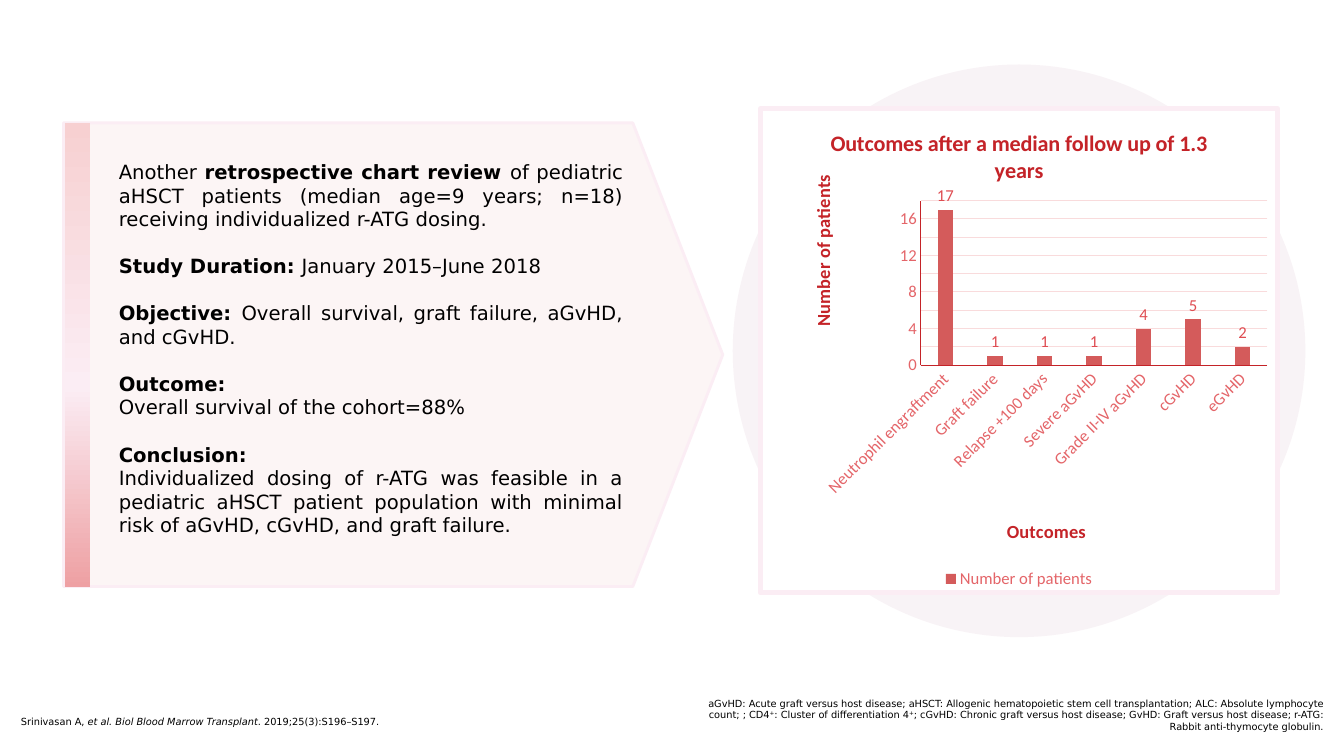
from lxml import etree
from pptx import Presentation
from pptx.chart.data import CategoryChartData
from pptx.dml.color import RGBColor
from pptx.enum import chart as ch, shapes, text
from pptx.oxml import parse_xml
from pptx.oxml.ns import nsdecls, qn
from pptx.util import Pt

BLACK = RGBColor(0, 0, 0)
WHITE = RGBColor(0xFF, 0xFF, 0xFF)
BLUSH = RGBColor(0xF2, 0xCD, 0xCD)
PALE_PINK = RGBColor(0xFB, 0xED, 0xF4)
ROSE = RGBColor(0xF7, 0xD0, 0xD1)
SALMON = RGBColor(0xEE, 0xA0, 0xA3)
PLUM = RGBColor(0x88, 0x1B, 0x5C)
CRIMSON = RGBColor(0xC4, 0x23, 0x28)
CORAL = RGBColor(0xE4, 0x65, 0x69)
LABEL_RED = RGBColor(0xDF, 0x4D, 0x52)
BAR_RED = RGBColor(0xD4, 0x5B, 0x5B)
GRID_PINK = RGBColor(0xF9, 0xDB, 0xDC)

BODY_FONT, CHART_FONT = "DejaVu Sans", "Calibri"
LINE_GAP = 16.8

# Each paragraph: space before, then (text, style) runs
STUDY = [
    (0, [("Another ", ""), ("retrospective chart review ", "bold"),
         ("of pediatric aHSCT patients (median age=9 years; n=18) "
          "receiving individualized r-ATG dosing.", "")]),
    (LINE_GAP, [("Study Duration: ", "bold"), ("January 2015–June 2018", "")]),
    (LINE_GAP, [("Objective: ", "bold"),
                ("Overall survival, graft failure, aGvHD, and cGvHD.", "")]),
    (LINE_GAP, [("Outcome:", "bold")]),
    (0, [("Overall survival of the cohort=88%", "")]),
    (LINE_GAP, [("Conclusion:", "bold")]),
    (0, [("Individualized dosing of r-ATG was feasible in a pediatric aHSCT patient "
          "population with minimal risk of aGvHD, cGvHD, and graft failure.", "")]),
]
CITATION = [(0, [("Srinivasan A, ", ""),
                 ("et al. Biol Blood Marrow Transplant", "italic"),
                 (". 2019;25(3):S196–S197.", "")])]
ABBREVIATIONS = [(0, [
    ("aGvHD: Acute graft versus host disease; aHSCT: Allogenic hematopoietic stem cell "
     "transplantation; ALC: Absolute lymphocyte count; ; CD4", ""),
    ("+", "super"), (": Cluster of differentiation 4", ""), ("+", "super"),
    ("; cGvHD: Chronic graft versus host disease; GvHD: Graft versus host disease; "
     "r-ATG: Rabbit anti-thymocyte globulin.", "")])]
OUTCOMES = {"Neutrophil engraftment": 17, "Graft failure": 1, "Relapse +100 days": 1,
            "Severe aGvHD": 1, "Grade II-IV aGvHD": 4, "cGvHD": 5, "eGvHD": 2}


def set_font(font, size, color, name=CHART_FONT, bold=False):
    font.size, font.name, font.bold = Pt(size), name, bold
    font.color.rgb = color


def write(frame, paragraphs, size, color=BLACK, font=BODY_FONT, align=None):
    for i, (gap, runs) in enumerate(paragraphs):
        para = frame.add_paragraph() if i else frame.paragraphs[0]
        if align is not None:
            para.alignment = align
        if gap:
            para.space_before = Pt(gap)
        for words, style in runs:
            run = para.add_run()
            run.text = words
            set_font(run.font, size, color, font, style == "bold")
            if style == "italic":
                run.font.italic = True
            if style == "super":
                run.font._element.set("baseline", "30000")


def add_text(slide, box, paragraphs, **style):
    frame = slide.shapes.add_textbox(*map(Pt, box)).text_frame
    frame.word_wrap = True
    write(frame, paragraphs, **style)


def add_plain_shape(slide, kind, box, color, opacity=100):
    shape = slide.shapes.add_shape(kind, *map(Pt, box))
    shape.shadow.inherit = False
    shape.line.fill.background()
    shape.fill.solid()
    shape.fill.fore_color.rgb = color
    if opacity < 100:
        clr = shape._element.spPr.find(".//" + qn("a:srgbClr"))
        etree.SubElement(clr, qn("a:alpha")).set("val", str(opacity * 1000))
    return shape


def fill_gradient(shape, stops):
    """Replace the solid fill with a top-to-bottom gradient."""
    marks = "".join(f'<a:gs pos="{pos * 1000}"><a:srgbClr val="{color}"/></a:gs>'
                    for pos, color in stops)
    solid = shape._element.spPr.find(qn("a:solidFill"))
    solid.getparent().replace(solid, parse_xml(
        f'<a:gradFill {nsdecls("a")}><a:gsLst>{marks}</a:gsLst>'
        '<a:lin ang="5400000" scaled="0"/></a:gradFill>'))


def place_in_chart(element, index, inner=False, **fractions):
    """Give a chart part a fixed place, in fractions of the chart."""
    for old in element.findall(qn("c:layout")):
        element.remove(old)
    target = '<c:layoutTarget val="inner"/>' if inner else ""
    modes = "".join(f'<c:{k}Mode val="edge"/>' for k in "xy")
    values = "".join(f'<c:{k} val="{v}"/>' for k, v in fractions.items())
    element.insert(index, parse_xml(
        f'<c:layout {nsdecls("c")}><c:manualLayout>{target}{modes}{values}'
        '</c:manualLayout></c:layout>'))


def add_study_panel(slide, left, top, width, height):
    arrow = add_plain_shape(slide, shapes.MSO_SHAPE.PENTAGON,
                            (left, top, width, height), BLUSH, 20)
    arrow.adjustments[0] = 0.194
    arrow.line.color.rgb = PALE_PINK
    arrow.line.width = Pt(2)
    stripe = add_plain_shape(slide, shapes.MSO_SHAPE.RECTANGLE,
                             (left + 1, top, 18, height), ROSE)
    fill_gradient(stripe, [(0, ROSE), (57, PALE_PINK), (100, SALMON)])
    add_text(slide, (left + 32.4, top + 23, 374.4, height - 52.6), STUDY,
             size=14, align=text.PP_ALIGN.JUSTIFY)


def format_axis(axis, title, x, y):
    axis.major_tick_mark = axis.minor_tick_mark = ch.XL_TICK_MARK.NONE
    set_font(axis.tick_labels.font, 12, CORAL)
    axis.format.line.color.rgb = CRIMSON
    axis.format.line.width = Pt(0.75)
    write(axis.axis_title.text_frame, [(0, [(title, "bold")])],
          size=13.3, color=CRIMSON, font=CHART_FONT)
    place_in_chart(axis.axis_title._element, 1, x=x, y=y)


def frame_chart(chart):
    chart._chartSpace.find(qn("c:chart")).addnext(parse_xml(
        f'<c:spPr {nsdecls("c", "a")}>'
        f'<a:solidFill><a:srgbClr val="{WHITE}"/></a:solidFill>'
        f'<a:ln w="{Pt(3.5)}"><a:solidFill><a:srgbClr val="{PALE_PINK}"/></a:solidFill>'
        '</a:ln></c:spPr>'))


def add_outcomes_chart(slide, left, top, width, height):
    data = CategoryChartData()
    data.categories = OUTCOMES.keys()
    data.add_series("Number of patients", OUTCOMES.values())
    chart = slide.shapes.add_chart(ch.XL_CHART_TYPE.COLUMN_CLUSTERED,
                                   *map(Pt, (left, top, width, height)), data).chart
    set_font(chart.font, 10, CRIMSON)
    frame_chart(chart)
    chart.has_title = True
    write(chart.chart_title.text_frame,
          [(0, [("Outcomes after a median follow up of 1.3 years", "bold")])],
          size=16, color=CRIMSON, font=CHART_FONT)
    chart.chart_title.include_in_layout = False
    chart.has_legend = True
    chart.legend.position = ch.XL_LEGEND_POSITION.BOTTOM
    chart.legend.include_in_layout = False
    set_font(chart.legend.font, 12, CORAL)

    format_axis(chart.category_axis, "Outcomes", 0.47, 0.84)
    slant = chart.category_axis._element.find(qn("c:txPr")).find(qn("a:bodyPr"))
    slant.set("rot", "-2700000")
    patients = chart.value_axis
    format_axis(patients, "Number of patients", 0.09, 0.13)
    patients.minimum_scale, patients.maximum_scale, patients.major_unit = 0, 18, 2
    patients.major_gridlines.format.line.color.rgb = GRID_PINK
    patients.major_gridlines.format.line.width = Pt(0.75)

    bars = chart.plots[0]
    bars.vary_by_categories = False
    bars.gap_width, bars.overlap = 219, -27
    series = bars.series[0]
    series.format.fill.solid()
    series.format.fill.fore_color.rgb = BAR_RED
    labels = series.data_labels
    labels.show_value = True
    labels.position = ch.XL_LABEL_POSITION.OUTSIDE_END
    set_font(labels.font, 12, LABEL_RED)
    plot_area = chart._chartSpace.find(".//" + qn("c:plotArea"))
    place_in_chart(plot_area, 0, inner=True, x=0.31, y=0.19, w=0.67, h=0.34)


def add_outcomes_panel(slide, left, top, size):
    add_plain_shape(slide, shapes.MSO_SHAPE.OVAL, (left, top, size, size), PLUM, 5)
    add_outcomes_chart(slide, left + 18, top + 29.8, 373, 349.2)


def add_footer(slide, left, top, width):
    add_text(slide, (left, top + 13, width, 15.8), CITATION, size=7)
    add_text(slide, (left + width, top, width, 32.4), ABBREVIATIONS,
             size=7, align=text.PP_ALIGN.RIGHT)


def main():
    prs = Presentation()
    prs.slide_width, prs.slide_height = Pt(960), Pt(540)
    slide = prs.slides.add_slide(prs.slide_layouts[6])
    add_study_panel(slide, 45.4, 87.8, 470.9, 331.2)
    add_outcomes_panel(slide, 523.4, 46.1, 409)
    add_footer(slide, 7.9, 494.6, 472.3)
    prs.save("out.pptx")


if __name__ == "__main__":
    main()
